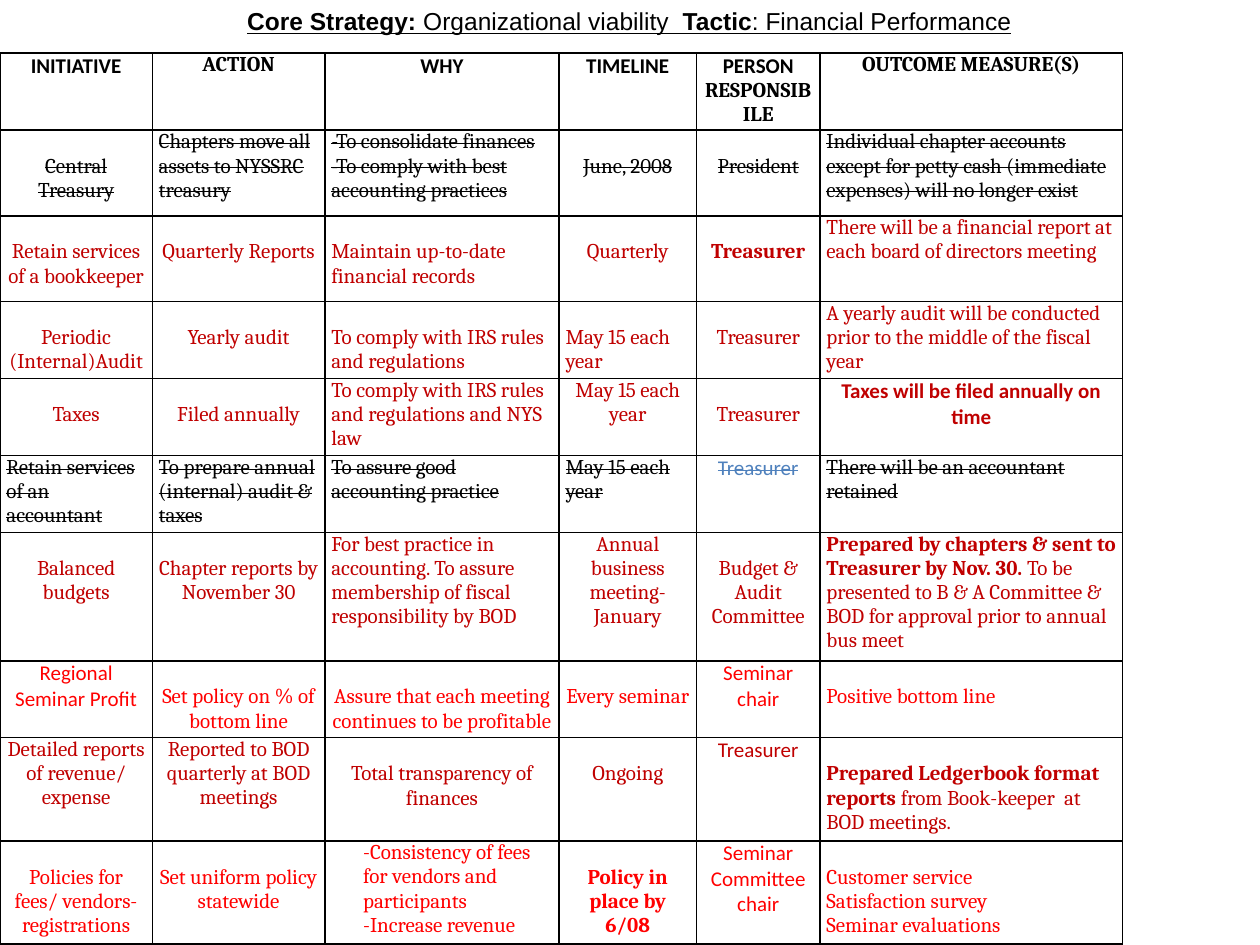
from dataclasses import dataclass

from lxml import etree
from pptx import Presentation
from pptx.dml.color import RGBColor
from pptx.enum.text import MSO_ANCHOR, MSO_AUTO_SIZE, PP_ALIGN
from pptx.oxml.ns import qn
from pptx.util import Cm, Pt

LEFT, CENTER = PP_ALIGN.LEFT, PP_ALIGN.CENTER
TOP = MSO_ANCHOR.TOP
NO_AUTOFIT = MSO_AUTO_SIZE.NONE
TITLE_ONLY = 5
CAMBRIA, CALIBRI = "Cambria", "Calibri"
BLACK, CRIMSON, RED, BLUE = "000000", "C00000", "FF0000", "4F81BD"
LINE_DROP = Cm(0.49)  # one 12 pt line
COLUMN_WIDTHS = (3.07, 3.48, 4.72, 2.77, 2.49, 6.1)


@dataclass
class Cell:
    """Lines of text; lead is a bold opening, first_font sets the first line."""
    text: str
    align: PP_ALIGN = CENTER
    dropped: bool = False
    first_font: str = CAMBRIA
    lead: str = ""
    bold: bool = False
    color: str = ""
    indent: float = 0


@dataclass
class Row:
    height: float
    color: str
    cells: list[Cell]
    strike: bool = False


def centered(text: str, **options) -> Cell:
    return Cell(text, **options)


def dropped(text: str, align: PP_ALIGN = CENTER, **options) -> Cell:
    """A cell whose text starts one line down."""
    return Cell(text, align, dropped=True, **options)


def left(text: str, **options) -> Cell:
    return Cell(text, LEFT, **options)


def heading(text: str, font: str = CALIBRI) -> Cell:
    return Cell(text, first_font=font, bold=True)


def calibri(text: str, **options) -> Cell:
    return Cell(text, first_font=CALIBRI, **options)


ROWS = [
    Row(1.55, BLACK, [
        heading("INITIATIVE"), heading("ACTION", CAMBRIA), heading("WHY"),
        heading("TIMELINE"), heading("PERSON\nRESPONSIBILE"),
        heading("OUTCOME MEASURE(S)", CAMBRIA)]),
    Row(1.73, BLACK, [
        dropped("Central\nTreasury"),
        left("Chapters move all assets to NYSSRC treasury"),
        left("-To consolidate finances\n-To comply with best accounting practices"),
        dropped("June, 2008"), dropped("President"),
        left("Individual chapter accounts except for petty cash "
             "(immediate expenses) will no longer exist")], strike=True),
    Row(1.73, CRIMSON, [
        dropped("Retain services of a bookkeeper"), dropped("Quarterly Reports"),
        dropped("Maintain up-to-date financial records", LEFT),
        dropped("Quarterly"), dropped("Treasurer", bold=True),
        left("There will be a financial report at each board of directors meeting")]),
    Row(1.55, CRIMSON, [
        dropped("Periodic (Internal)Audit"), dropped("Yearly audit"),
        dropped("To comply with IRS rules and regulations", LEFT),
        dropped("May 15 each year", LEFT), dropped("Treasurer"),
        left("A yearly audit will be conducted prior to the middle of the fiscal year")]),
    Row(1.55, CRIMSON, [
        dropped("Taxes"), dropped("Filed annually"),
        left("To comply with IRS rules and regulations and NYS law"),
        centered("May 15 each year"), dropped("Treasurer"),
        calibri("Taxes will be filed annually on time", bold=True)]),
    Row(1.55, BLACK, [
        left("Retain services of an accountant"),
        left("To prepare annual (internal) audit & taxes"),
        left("To assure good accounting practice"), left("May 15 each year"),
        calibri("Treasurer", color=BLUE),
        left("There will be an accountant retained")], strike=True),
    Row(2.59, CRIMSON, [
        dropped("Balanced budgets"), dropped("Chapter reports by November 30"),
        left("For best practice in accounting. To assure membership of fiscal "
             "responsibility by BOD"),
        centered("Annual business meeting- January"),
        dropped("Budget & Audit Committee"),
        left(" To be presented to B & A Committee & BOD for approval prior to "
             "annual bus meet",
             lead="Prepared by chapters & sent to Treasurer by Nov. 30.")]),
    Row(1.55, RED, [
        calibri("Regional Seminar Profit"), dropped("Set policy on % of bottom line"),
        dropped("Assure that each meeting continues to be profitable"),
        dropped("Every seminar"), calibri("Seminar chair"),
        dropped("Positive bottom line", LEFT)]),
    Row(2.08, CRIMSON, [
        centered("Detailed reports of revenue/ expense"),
        centered("Reported to BOD quarterly at BOD meetings"),
        dropped("Total transparency of finances"), dropped("Ongoing"),
        calibri("Treasurer"),
        dropped(" from Book-keeper  at BOD meetings.", LEFT,
                lead="Prepared Ledgerbook format reports")]),
    Row(2.08, RED, [
        dropped("Policies for fees/ vendors-registrations"),
        dropped("Set uniform policy statewide"),
        left("-Consistency of fees for vendors and participants\n-Increase revenue",
             indent=0.64),
        dropped("Policy in place by 6/08", bold=True),
        calibri("Seminar Committee chair"),
        dropped("Customer service\nSatisfaction survey\nSeminar evaluations", LEFT)]),
]

TITLE_RUNS = [("Core Strategy: ", True), ("Organizational viability  ", False),
              ("Tactic", True), (": Financial Performance", False)]


def set_all(target, values: dict) -> None:
    for name, value in values.items():
        setattr(target, name, value)


def add_run(paragraph, text: str, color: str, **font_values):
    run = paragraph.add_run()
    run.text = text
    set_all(run.font, font_values)
    run.font.color.rgb = RGBColor.from_string(color)
    return run


def add_borders(table_cell) -> None:
    properties = table_cell._tc.get_or_add_tcPr()
    for position, side in enumerate(("lnL", "lnR", "lnT", "lnB")):
        line = etree.Element(qn(f"a:{side}"), w=str(Pt(1)))
        fill = etree.SubElement(line, qn("a:solidFill"))
        etree.SubElement(fill, qn("a:srgbClr"), val=BLACK)
        properties.insert(position, line)


def fill_cell(table_cell, cell: Cell, row: Row) -> None:
    table_cell.fill.background()
    add_borders(table_cell)
    set_all(table_cell, {
        "margin_left": Cm(0.13), "margin_right": Cm(0.13), "margin_bottom": 0,
        "margin_top": LINE_DROP if cell.dropped else 0, "vertical_anchor": TOP})
    frame = table_cell.text_frame
    for index, text in enumerate(cell.text.split("\n")):
        paragraph = frame.add_paragraph() if index else frame.paragraphs[0]
        paragraph.alignment = cell.align
        if cell.indent:
            paragraph._p.get_or_add_pPr().set("marL", str(Cm(cell.indent)))
        font = CAMBRIA if index else cell.first_font
        parts = [(text, cell.bold)]
        if cell.lead and index == 0:
            parts.insert(0, (cell.lead, True))
        for part, bold in parts:
            run = add_run(paragraph, part, cell.color or row.color,
                          name=font, size=Pt(12), bold=bold)
            if row.strike:
                run._r.get_or_add_rPr().set("strike", "sngStrike")


def add_plan_table(slide) -> None:
    table = slide.shapes.add_table(
        len(ROWS), len(COLUMN_WIDTHS), 0, Cm(1.07), Cm(sum(COLUMN_WIDTHS)),
        Cm(sum(row.height for row in ROWS))).table
    set_all(table, {"first_row": False, "horz_banding": False})
    for column, width in zip(table.columns, COLUMN_WIDTHS):
        column.width = Cm(width)
    for table_row, row in zip(table.rows, ROWS):
        table_row.height = Cm(row.height)
        for table_cell, cell in zip(table_row.cells, row.cells):
            fill_cell(table_cell, cell, row)


def write_title(slide) -> None:
    title = slide.shapes.title
    set_all(title, {"left": Cm(2.41), "top": Cm(-0.23),
                    "width": Cm(20.55), "height": Cm(1.73)})
    frame = title.text_frame
    set_all(frame, {"margin_left": 0, "margin_right": 0, "margin_bottom": 0,
                    "margin_top": Cm(0.36), "vertical_anchor": TOP,
                    "word_wrap": False, "auto_size": NO_AUTOFIT})
    paragraph = frame.paragraphs[0]
    paragraph.alignment = CENTER
    for text, bold in TITLE_RUNS:
        add_run(paragraph, text, BLACK, name="Arial", size=Pt(14),
                bold=bold, underline=True)


def main() -> None:
    presentation = Presentation()
    set_all(presentation, {"slide_width": Cm(25.4), "slide_height": Cm(19.05)})
    slide = presentation.slides.add_slide(presentation.slide_layouts[TITLE_ONLY])
    add_plan_table(slide)
    write_title(slide)
    presentation.save("out.pptx")


if __name__ == "__main__":
    main()
